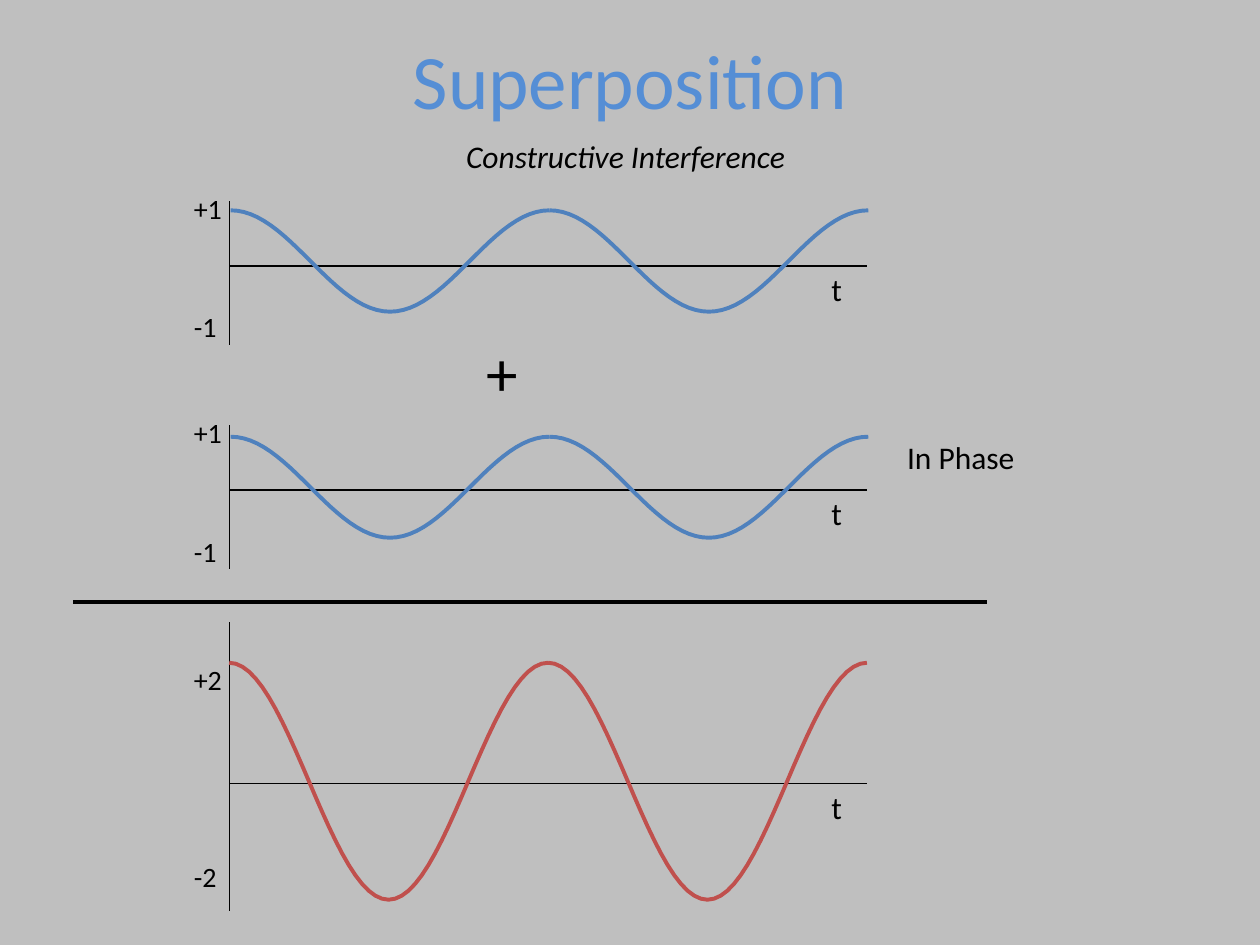
import math

from pptx import Presentation
from pptx.dml.color import RGBColor
from pptx.enum import shapes, text
from pptx.oxml.ns import qn
from pptx.util import Pt
from lxml import etree

FONT = "Calibri"
BLACK, BLUE, RED, TITLE_BLUE, GREY = "000000", "4F81BD", "C0504D", "558ED5", "BFBFBF"

TITLE = "Superposition"
# text, left, top, width, height, size, centred, italic
CAPTIONS = [
    ("Constructive Interference", 151.2, 74.9, 412.6, 36, 18, True, True),
    ("+", 270.7, 187.2, 46, 50.4, 36, False, False),
    ("In Phase", 511.2, 247, 169.2, 36, 18, False, False),
]
# axis_y: time axis; span: amplitude axis; labels: text and top; crest/trough: wave
GRAPHS = [
    dict(axis_y=152, span=(115, 197.3), labels=[("+1", 105.8), ("-1", 173.5)],
         start=131.8, crest=120.2, trough=178.1, color=BLUE),
    dict(axis_y=280, span=(243, 325.3), labels=[("+1", 234), ("-1", 301.7)],
         start=131.8, crest=249.6, trough=307.3, color=BLUE),
    dict(axis_y=447.8, span=(355.7, 520.4), labels=[("+2", 375.1), ("-2", 487.4)],
         start=131, crest=378.7, trough=514.1, color=RED),
]
AXIS_LEFT, AXIS_RIGHT = 131, 495.4
PERIOD, PERIODS, STEPS = 182.2, 2, 48
SUM_LINE = (41.8, 344.2, 563.8, 344.2)


def rgb(color):
    return RGBColor.from_string(color)


def style_text(frame, content, size, color=BLACK, centred=False, italic=False):
    frame.text = content
    paragraph = frame.paragraphs[0]
    paragraph.alignment = text.PP_ALIGN.CENTER if centred else text.PP_ALIGN.LEFT
    font = paragraph.runs[0].font
    font.name, font.size, font.italic = FONT, Pt(size), italic
    font.color.rgb = rgb(color)


def add_label(slide, content, left, top, width, height, size, centred=False, italic=False):
    box = slide.shapes.add_textbox(Pt(left), Pt(top), Pt(width), Pt(height))
    box.text_frame.word_wrap = True
    style_text(box.text_frame, content, size, centred=centred, italic=italic)


def add_line(slide, x1, y1, x2, y2, weight):
    line = slide.shapes.add_connector(
        shapes.MSO_CONNECTOR.STRAIGHT, Pt(x1), Pt(y1), Pt(x2), Pt(y2))
    line.line.color.rgb = rgb(BLACK)
    line.line.width = Pt(weight)
    etree.SubElement(line._element.spPr, qn("a:effectLst"))


def add_wave(slide, left, crest, trough, color):
    """Draw one cosine period, starting and ending on a crest."""
    middle, amplitude = (crest + trough) / 2, (trough - crest) / 2
    points = [(Pt(left + PERIOD * i / STEPS),
               Pt(middle - amplitude * math.cos(2 * math.pi * i / STEPS)))
              for i in range(STEPS + 1)]
    builder = slide.shapes.build_freeform(*points[0])
    builder.add_line_segments(points[1:], close=False)
    wave = builder.convert_to_shape()
    wave.fill.background()
    wave.line.color.rgb = rgb(color)
    wave.line.width = Pt(2.25)
    wave.shadow.inherit = False


def add_graph(slide, axis_y, span, labels, start, crest, trough, color):
    add_line(slide, AXIS_LEFT, axis_y, AXIS_RIGHT, axis_y, 0.75)
    add_line(slide, AXIS_LEFT, span[0], AXIS_LEFT, span[1], 0.75)
    add_label(slide, "t", 468, axis_y - 1, 27.4, 36, 18)
    for content, top in labels:
        add_label(slide, content, 103.7, top, 47.5, 26.6, 16)
    for period in range(PERIODS):
        add_wave(slide, start + period * PERIOD, crest, trough, color)


def main():
    prs = Presentation()
    prs.slide_width, prs.slide_height = Pt(720), Pt(540)
    slide = prs.slides.add_slide(prs.slide_layouts[5])
    slide.background.fill.solid()
    slide.background.fill.fore_color.rgb = rgb(GREY)

    title = slide.shapes.title
    title.left, title.top, title.width, title.height = Pt(54), Pt(0), Pt(612), Pt(90)
    title.text_frame.vertical_anchor = text.MSO_ANCHOR.MIDDLE
    style_text(title.text_frame, TITLE, 44, TITLE_BLUE, centred=True)

    for graph in GRAPHS:
        add_graph(slide, **graph)
    add_line(slide, *SUM_LINE, 2.25)
    for caption in CAPTIONS:
        add_label(slide, *caption)
    prs.save("out.pptx")


if __name__ == "__main__":
    main()
